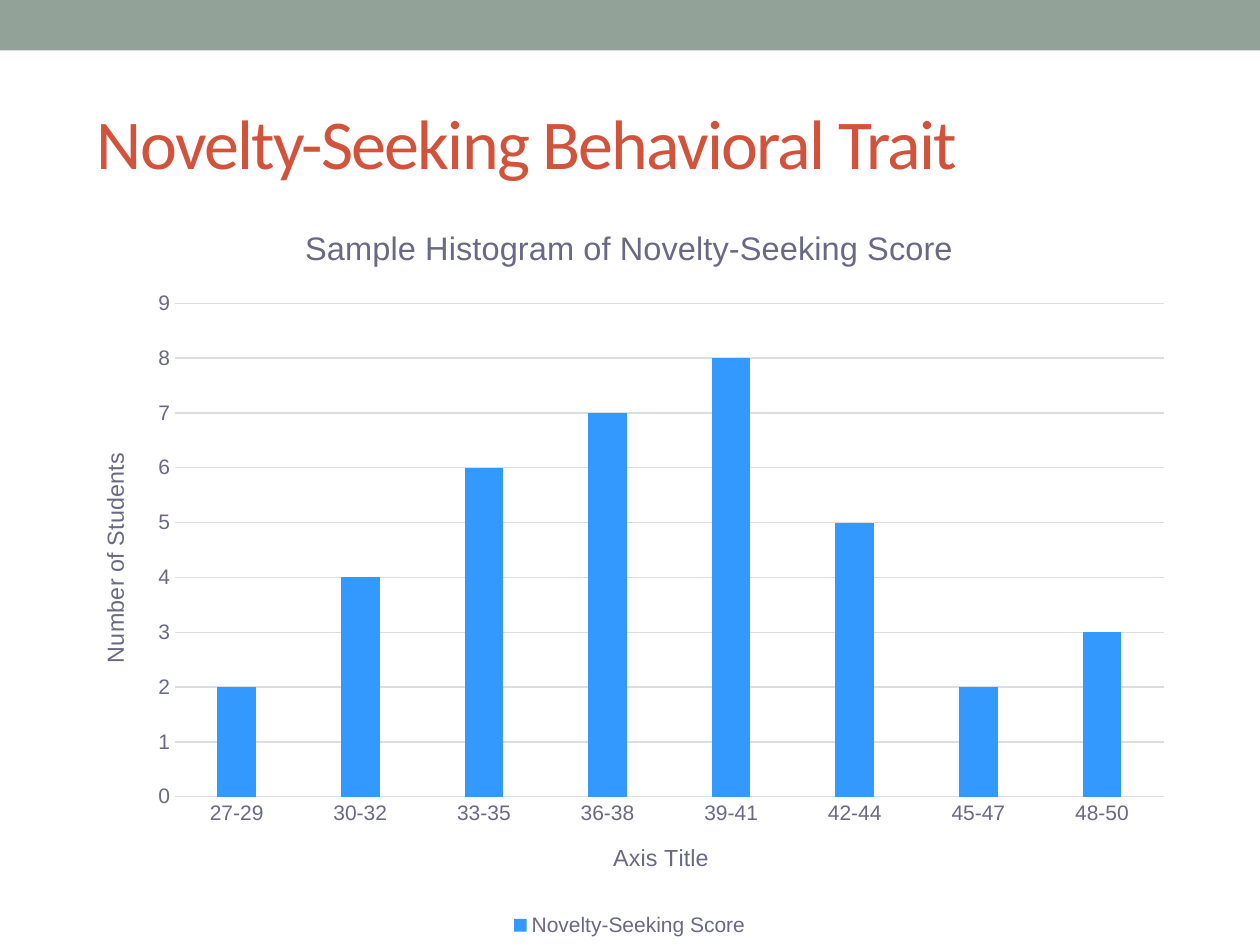
from pptx import Presentation
from pptx.chart.data import CategoryChartData
from pptx.dml.color import RGBColor
from pptx.enum.chart import XL_CHART_TYPE, XL_LEGEND_POSITION, XL_TICK_MARK
from pptx.enum.shapes import MSO_SHAPE
from pptx.enum.text import MSO_ANCHOR, PP_ALIGN
from pptx.util import Cm, Pt

COLUMN = XL_CHART_TYPE.COLUMN_CLUSTERED
BOTTOM = XL_LEGEND_POSITION.BOTTOM
NO_TICK = XL_TICK_MARK.NONE
RECT = MSO_SHAPE.RECTANGLE
MIDDLE = MSO_ANCHOR.MIDDLE
LEFT = PP_ALIGN.LEFT

COLORS = {
    "band": "93A299",
    "title": "D2533C",
    "text": "696986",
    "grid": "DCDCE3",
    "bar": "3399FF",
}
SCORES = {
    "27-29": 2, "30-32": 4, "33-35": 6, "36-38": 7,
    "39-41": 8, "42-44": 5, "45-47": 2, "48-50": 3,
}


def apply(target, values):
    for name, value in values.items():
        setattr(target, name, value)


class Deck:
    def __init__(self, slide):
        self.slide = slide

    def color(self, name):
        return RGBColor.from_string(COLORS[name])

    def fill(self, item, name):
        item.fill.solid()
        item.fill.fore_color.rgb = self.color(name)

    def font(self, font, size, name, face="Arial"):
        apply(font, {"size": Pt(size), "name": face, "bold": False})
        font.color.rgb = self.color(name)

    def line(self, line):
        line.width = Pt(0.75)
        line.color.rgb = self.color("grid")

    def band(self, box):
        shape = self.slide.shapes.add_shape(RECT, *map(Cm, box))
        shape.shadow.inherit = False
        self.fill(shape, "band")
        shape.line.fill.background()

    def title(self, text, box):
        shape = self.slide.shapes.title
        apply(shape, dict(zip(("left", "top", "width", "height"), map(Cm, box))))
        frame = shape.text_frame
        apply(frame, {"text": text, "vertical_anchor": MIDDLE, "word_wrap": True})
        para = frame.paragraphs[0]
        para.alignment = LEFT
        run = para.runs[0]
        self.font(run.font, 40, "title", "Calibri")
        run.font._element.set("spc", "-100")

    def label(self, owner, text, size):
        frame = owner.text_frame
        frame.text = text
        self.font(frame.paragraphs[0].runs[0].font, size, "text")

    def axis(self, axis, text):
        apply(axis, {"major_tick_mark": NO_TICK, "minor_tick_mark": NO_TICK})
        self.font(axis.tick_labels.font, 12, "text")
        self.label(axis.axis_title, text, 13.3)

    def chart(self, name, scores, heads, box):
        data = CategoryChartData()
        data.categories = list(scores)
        data.add_series(name, list(scores.values()))
        chart = self.slide.shapes.add_chart(COLUMN, *map(Cm, box), data).chart
        self.font(chart.font, 10, "text")
        self.label(chart.chart_title, heads["chart"], 18.6)
        chart.chart_title.include_in_layout = False

        groups, counts = chart.category_axis, chart.value_axis
        self.axis(groups, heads["groups"])
        self.axis(counts, heads["counts"])
        self.line(groups.format.line)
        counts.format.line.fill.background()
        self.line(counts.major_gridlines.format.line)
        apply(counts, {"minimum_scale": 0, "maximum_scale": 9, "major_unit": 1})

        chart.has_legend = True
        apply(chart.legend, {"position": BOTTOM, "include_in_layout": False})
        self.font(chart.legend.font, 12, "text")

        plot = chart.plots[0]
        apply(plot, {"gap_width": 219, "overlap": -27, "vary_by_categories": False})
        self.fill(plot.series[0].format, "bar")


def main():
    prs = Presentation()
    apply(prs, {"slide_width": Cm(25.4), "slide_height": Cm(19.05)})
    deck = Deck(prs.slides.add_slide(prs.slide_layouts[5]))
    deck.band((0, 0, 25.4, 1.02))
    deck.title("Novelty-Seeking Behavioral Trait", (1.7, 1.48, 22.43, 2.75))
    heads = {
        "chart": "Sample Histogram of Novelty-Seeking Score",
        "groups": "Axis Title",
        "counts": "Number of Students",
    }
    deck.chart("Novelty-Seeking Score", SCORES, heads, (1.48, 4.02, 22.43, 14.96))
    prs.save("out.pptx")


if __name__ == "__main__":
    main()
